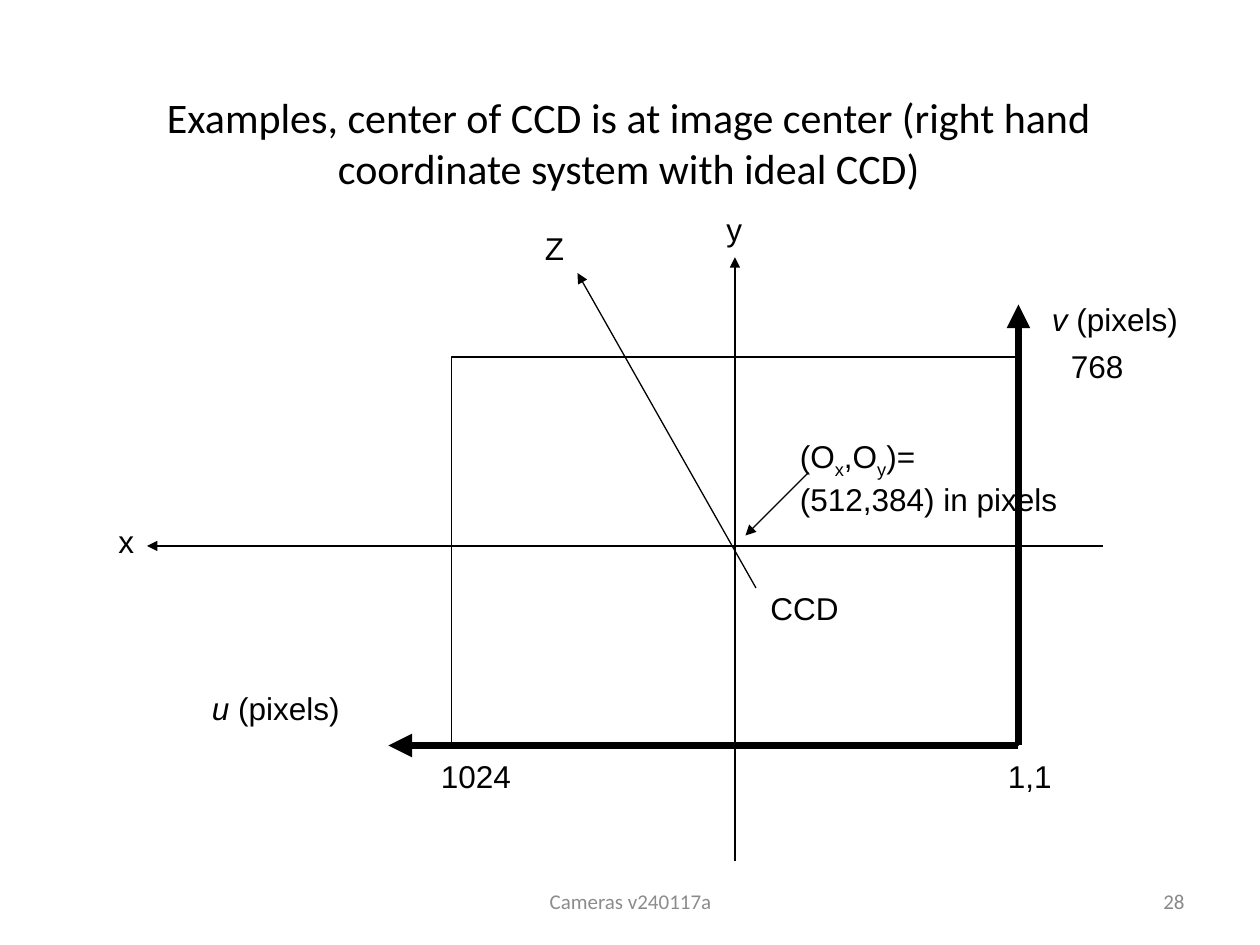
from pptx import Presentation
from pptx.dml.color import RGBColor
from pptx.enum.shapes import MSO_CONNECTOR as Connector, MSO_SHAPE as Shape
from pptx.enum.text import MSO_ANCHOR as Anchor, PP_ALIGN as Align
from pptx.oxml.ns import qn
from pptx.util import Inches, Pt
from lxml.etree import SubElement

COLORS = {"ink": "000000", "footer": "8C8C8C", "number": "898989"}
CELLS_PER_INCH = 12
ORIGIN = (97, 71)
THIN, THICK = 0.75, 4.5

ARROWS = [
    ((105, 52), (14, 52), THIN),
    ((70, 82), (70, 24.5), THIN),
    ((77, 45), (71, 51), THIN),
    ((72, 56), (55, 26), THIN),
    (ORIGIN, (97, 29), THICK),
    (ORIGIN, (37, 71), THICK),
]
LABELS = [
    (19, 65, 14.6, [[("u", "italic"), (" (pixels)", "")]]),
    (99, 28, 14.4, [[("v", "italic"), (" (pixels)", "")]]),
    (75, 41, 26.9, [
        [("(O", ""), ("x", "sub"), (",O", ""), ("y", "sub"), (")=", "")],
        [("(512,384) in pixels", "")],
    ]),
    (68, 19.4, 4, [[("y", "")]]),
    (10.1, 49.1, 4, [[("x", "")]]),
    (50.7, 21.2, 4.2, [[("Z", "")]]),
    (72.2, 55.5, 10, [[("CCD", "")]]),
    (94.8, 71.5, 6.6, [[("1,1", "")]]),
    (40.8, 71.5, 9.1, [[("1024", "")]]),
    (100.8, 32.5, 7.4, [[("768", "")]]),
]


def cells(count):
    return Inches(count / CELLS_PER_INCH)


def color(name):
    return RGBColor.from_string(COLORS[name])


def style_para(para, font, size, ink, align=Align.LEFT):
    para.alignment = align
    para.font.name = font
    para.font.size = Pt(size)
    para.font.color.rgb = color(ink)


def set_title(page, text):
    title = page.shapes.title
    title.left, title.top = Inches(0.48), Inches(0.61)
    title.width, title.height = Inches(9.02), Inches(1.44)
    frame = title.text_frame
    frame.text = text
    frame.vertical_anchor = Anchor.MIDDLE
    frame.margin_bottom = Inches(0.45)
    style_para(frame.paragraphs[0], "Calibri", 24, "ink", Align.CENTER)


def add_sensor(page, left, top, width, height):
    sensor = page.shapes.add_shape(Shape.RECTANGLE, cells(left), cells(top),
                                   cells(width), cells(height))
    sensor.shadow.inherit = False
    sensor.fill.background()
    sensor.line.color.rgb = color("ink")
    sensor.line.width = Pt(THIN)


def add_arrow(page, start, tip, weight):
    arrow = page.shapes.add_connector(
        Connector.STRAIGHT, *(cells(value) for value in start + tip))
    arrow.line.color.rgb = color("ink")
    arrow.line.width = Pt(weight)
    SubElement(arrow.line._get_or_add_ln(), qn("a:tailEnd"), type="triangle")
    SubElement(arrow._element.spPr, qn("a:effectLst"))


def add_label(page, left, top, width, lines):
    box = page.shapes.add_textbox(cells(left), cells(top), cells(width),
                                  Inches(0.1 + 0.3 * len(lines)))
    frame = box.text_frame
    frame.word_wrap = False
    for index, spans in enumerate(lines):
        para = frame.add_paragraph() if index else frame.paragraphs[0]
        style_para(para, "Arial", 18, "ink")
        for text, style in spans:
            span = para.add_run()
            span.text = text
            if style == "italic":
                span.font.italic = True
            elif style == "sub":
                span.font._element.set("baseline", "-25000")


def add_footer(page, left, width, text, ink, align):
    box = page.shapes.add_textbox(Inches(left), Inches(6.95), Inches(width), Inches(0.4))
    frame = box.text_frame
    frame.word_wrap = True
    frame.vertical_anchor = Anchor.MIDDLE
    frame.text = text
    style_para(frame.paragraphs[0], "Calibri", 12, ink, align)


def main():
    deck = Presentation()
    deck.slide_width, deck.slide_height = Inches(10), Inches(7.5)
    page = deck.slides.add_slide(deck.slide_layouts.get_by_name("Title Only"))
    set_title(page, "Examples, center of CCD is at image center "
                    "(right hand coordinate system with ideal CCD)")
    add_sensor(page, 43, 34, 54, 37)
    for start, tip, weight in ARROWS:
        add_arrow(page, start, tip, weight)
    for left, top, width, lines in LABELS:
        add_label(page, left, top, width, lines)
    add_footer(page, 3.42, 3.17, "Cameras v240117a", "footer", Align.CENTER)
    add_footer(page, 7.17, 2.33, "28", "number", Align.RIGHT)
    deck.save("out.pptx")


if __name__ == "__main__":
    main()
